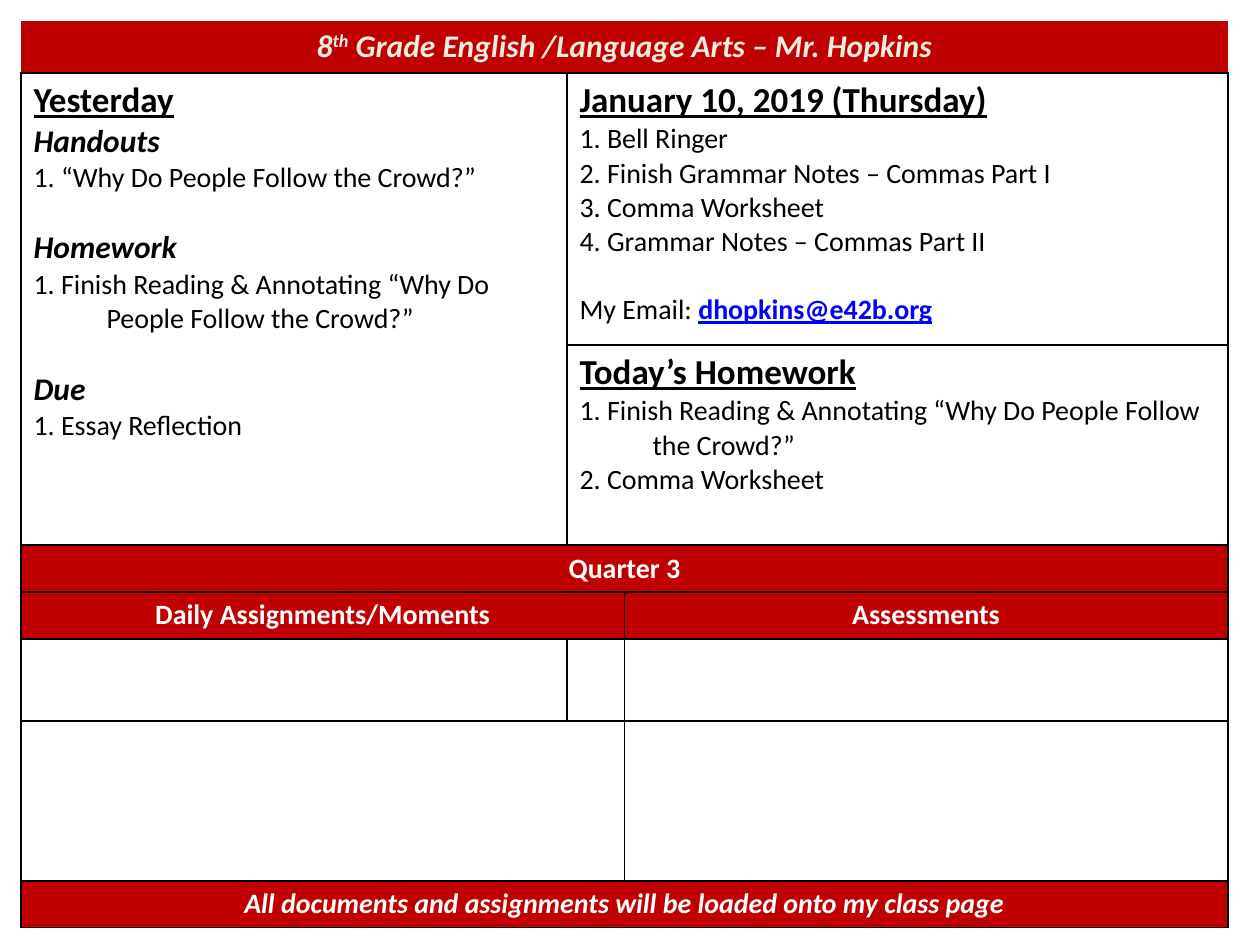
from lxml import etree
from pptx import Presentation
from pptx import util as u
from pptx.dml.color import RGBColor
from pptx.enum import text
from pptx.oxml.ns import qn

SCALE = u.Inches(1) / 126
LEFT, WIDTH = 21, 1207
RED, BLACK, WHITE, CREAM, BLUE = "C00000", "000000", "FFFFFF", "EEECE1", "0000FF"

TITLE = {"size": u.Pt(20), "bold": True, "underline": True}
SECTION = {"size": u.Pt(18), "bold": True, "italic": True}
ITEM = {"size": u.Pt(16)}
LINK = {"size": u.Pt(16), "bold": True, "underline": True, "color": BLUE}
BANNER = {**SECTION, "color": CREAM}
BAND = {"size": u.Pt(16), "bold": True, "color": WHITE}
BLANK_LINE = u.Pt(19.5)
SHORT, LONG = 48, 73  # hanging indents


def px(value):
    return u.Emu(round(value * SCALE))


def rgb(value):
    return RGBColor.from_string(value)


def add_run(paragraph, words, style, baseline=None):
    run = paragraph.add_run()
    run.text = words
    run.font.name = "Calibri"
    run.font.color.rgb = rgb(style.get("color", BLACK))
    for name, value in style.items():
        if name != "color":
            setattr(run.font, name, value)
    if baseline:
        run.font._element.set("baseline", str(baseline))


def hang(paragraph, indent):
    properties = paragraph._p.get_or_add_pPr()
    properties.set("marL", str(px(indent)))
    properties.set("indent", str(-px(indent)))


def add_lines(cell, lines):
    """Each line is (runs, hanging indent, space before)."""
    frame = cell.text_frame
    for number, (runs, indent, gap) in enumerate(lines):
        paragraph = frame.add_paragraph() if number else frame.paragraphs[0]
        if indent:
            hang(paragraph, indent)
        if gap:
            paragraph.space_before = gap
        for run in runs:
            add_run(paragraph, *run)


def add_band(cell, *runs):
    cell.fill.solid()
    cell.fill.fore_color.rgb = rgb(RED)
    add_lines(cell, [(runs, 0, 0)])
    cell.text_frame.paragraphs[0].alignment = text.PP_ALIGN.CENTER


def set_borders(cell, color):
    properties = cell._tc.get_or_add_tcPr()
    for side in ("lnL", "lnR", "lnT", "lnB"):
        line = etree.SubElement(properties, qn(f"a:{side}"), w=str(u.Pt(1)))
        if color:
            fill = etree.SubElement(line, qn("a:solidFill"))
            etree.SubElement(fill, qn("a:srgbClr"), val=color)
        else:
            etree.SubElement(line, qn("a:noFill"))


def add_grid(slide, top, columns, rows, border=BLACK):
    frame = slide.shapes.add_table(len(rows), len(columns), px(LEFT), px(top),
                                   px(sum(columns)), px(sum(rows)))
    table = frame.table
    table.first_row = table.horz_banding = False
    for column, width in zip(table.columns, columns):
        column.width = px(width)
    for row, height in zip(table.rows, rows):
        row.height = px(height)
    for cell in table.iter_cells():
        set_borders(cell, border)
        cell.fill.background()
    return table


def title(words, indent=0):
    return [(words, TITLE)], indent, 0


def section(words, gap=0):
    return [(words, SECTION)], 0, gap


def item(words, indent=LONG):
    return [(words, ITEM)], indent, 0


def add_agenda(slide):
    table = add_grid(slide, 73, [546, WIDTH - 546], [272, 190])
    table.cell(0, 0).merge(table.cell(1, 0))
    reading = "1. Finish Reading & Annotating “Why Do People Follow the Crowd?”"
    add_lines(table.cell(0, 0), [
        title("Yesterday"),
        section("Handouts"),
        item("1. “Why Do People Follow the Crowd?”", SHORT),
        section("Homework", BLANK_LINE),
        item(reading),
        section("Due", BLANK_LINE),
        item("1. Essay Reflection", SHORT),
    ])
    add_lines(table.cell(0, 1), [
        title("January 10, 2019 (Thursday)", LONG),
        item("1. Bell Ringer"),
        item("2. Finish Grammar Notes – Commas Part I"),
        item("3. Comma Worksheet"),
        item("4. Grammar Notes – Commas Part II"),
        ([("My Email: ", ITEM), ("dhopkins@e42b.org", LINK)], LONG, BLANK_LINE),
    ])
    add_lines(table.cell(1, 1), [
        title("Today’s Homework", LONG),
        item(reading),
        item("2. Comma Worksheet"),
    ])


def add_header(slide):
    table = add_grid(slide, 21, [WIDTH], [51], border=None)
    add_band(table.cell(0, 0), ("8", BANNER), ("th", BANNER, 30000),
             (" Grade English /Language Arts – Mr. Hopkins", BANNER))


def add_quarter(slide):
    table = add_grid(slide, 545, [WIDTH / 2] * 2, [46, 46, 242, 46])
    for row in (0, 3):
        table.cell(row, 0).merge(table.cell(row, 1))
    add_band(table.cell(0, 0), ("Quarter 3", BAND))
    add_band(table.cell(1, 0), ("Daily Assignments/Moments", BAND))
    add_band(table.cell(1, 1), ("Assessments", BAND))
    add_band(table.cell(3, 0),
             ("All documents and assignments will be loaded onto my class page",
              {**BAND, "italic": True}))


def main():
    presentation = Presentation()
    presentation.slide_width, presentation.slide_height = px(1260), px(945)
    slide = presentation.slides.add_slide(presentation.slide_layouts[6])
    # Back to front: the quarter table lies over the agenda
    add_agenda(slide)
    add_header(slide)
    add_quarter(slide)
    presentation.save("out.pptx")


if __name__ == "__main__":
    main()
